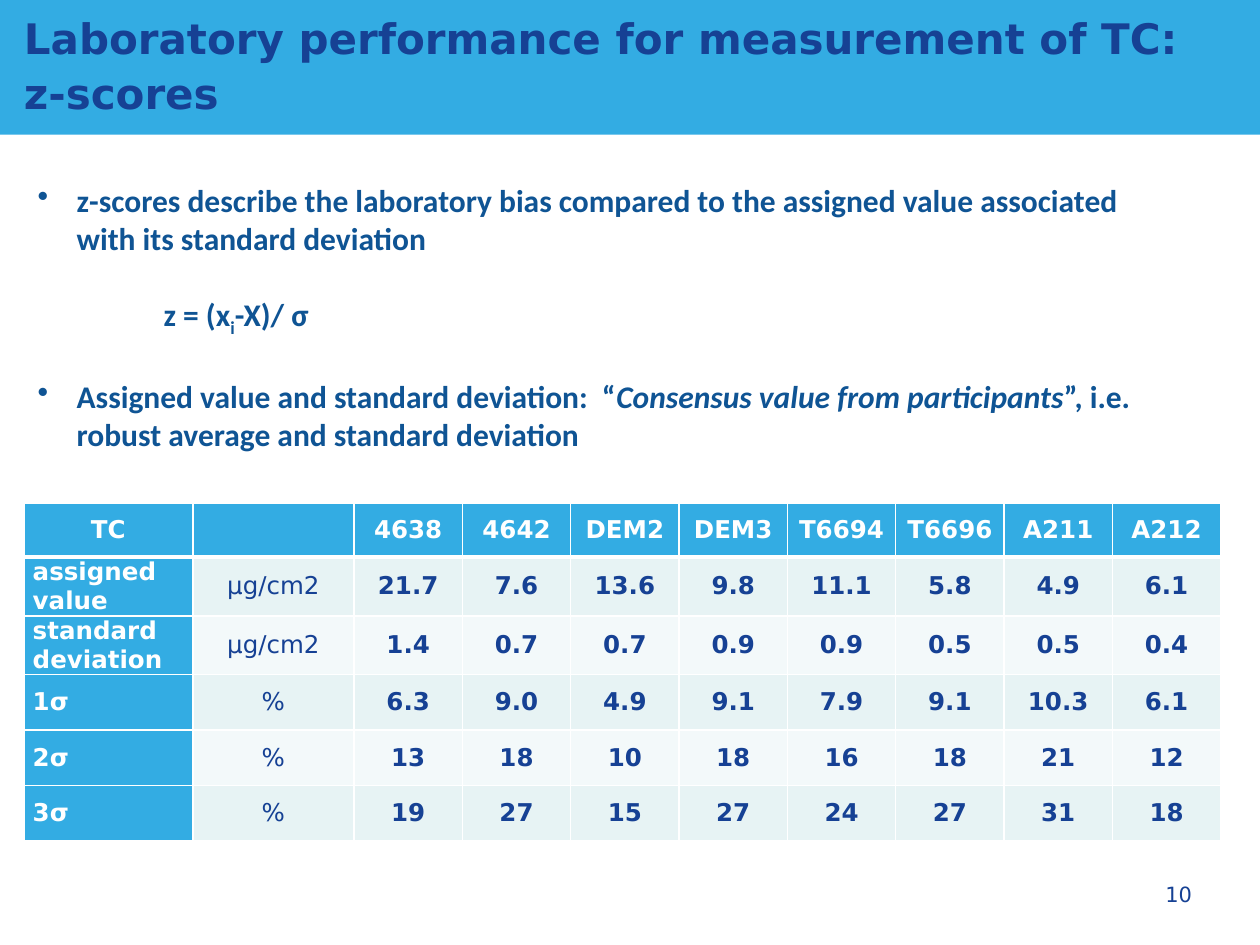
from lxml.etree import SubElement
from pptx import Presentation
from pptx.dml.color import RGBColor
from pptx.enum.shapes import MSO_SHAPE
from pptx.enum.text import MSO_ANCHOR, MSO_AUTO_SIZE, PP_ALIGN
from pptx.oxml.ns import qn
from pptx.util import Inches, Pt

# Content
TITLE = ["Laboratory performance for measurement of TC:", "z-scores"]
PAGE_NUMBER = "10"
# Each paragraph: has a bullet, then runs of (text, style)
BODY = [
    (True, [("z-scores describe the laboratory bias compared to the assigned value "
             "associated with its standard deviation", "")]),
    (False, [("z = (x", ""), ("i", "subscript"), ("-X)/ σ", "")]),
    (True, [("Assigned value and standard deviation:  “", ""),
            ("Consensus value from participants", "italic"),
            ("”, i.e. robust average and standard deviation", "")]),
]
TABLE = [
    ["TC", "", "4638", "4642", "DEM2", "DEM3", "T6694", "T6696", "A211", "A212"],
    ["assigned value", "μg/cm2", "21.7", "7.6", "13.6", "9.8", "11.1", "5.8", "4.9", "6.1"],
    ["standard deviation", "μg/cm2", "1.4", "0.7", "0.7", "0.9", "0.9", "0.5", "0.5", "0.4"],
    ["1σ", "%", "6.3", "9.0", "4.9", "9.1", "7.9", "9.1", "10.3", "6.1"],
    ["2σ", "%", "13", "18", "10", "18", "16", "18", "21", "12"],
    ["3σ", "%", "19", "27", "15", "27", "24", "27", "31", "18"],
]
COLUMN_WIDTHS = [1.34, 1.28] + [0.86] * 8
ROW_HEIGHTS = [0.43] + [0.44] * 5

# Style
SKY = RGBColor(0x33, 0xAC, 0xE3)
NAVY = RGBColor(0x16, 0x41, 0x94)
BLUE = RGBColor(0x0F, 0x54, 0x94)
WHITE = RGBColor(0xFF, 0xFF, 0xFF)
BANDS = [RGBColor(0xF3, 0xF9, 0xFA), RGBColor(0xE7, 0xF3, 0xF4)]
TABLE_FONT = "DejaVu Sans"
BODY_FONT = "Calibri"
LEFT = 0.19


def set_font(paragraph, name, size, color, bold=False):
    font = paragraph.font
    font.name, font.size, font.bold = name, Pt(size), bold
    font.color.rgb = color


def set_insets(frame, horizontal, vertical):
    frame.margin_left = frame.margin_right = Inches(horizontal)
    frame.margin_top = frame.margin_bottom = Inches(vertical)


def set_indent(paragraph, left, first=0, bullet=None):
    properties = paragraph._p.get_or_add_pPr()
    properties.set("marL", str(Inches(left)))
    properties.set("indent", str(Inches(first)))
    if bullet:
        SubElement(properties, qn("a:buChar"), char=bullet)


def set_borders(cell, widths):
    properties = cell._tc.get_or_add_tcPr()
    for side, width in widths.items():
        line = SubElement(properties, qn(f"a:ln{side}"), w=str(Pt(width)))
        fill = SubElement(line, qn("a:solidFill"))
        SubElement(fill, qn("a:srgbClr"), val=str(WHITE))


presentation = Presentation()
presentation.slide_width, presentation.slide_height = Inches(10), Inches(7.5)
slide = presentation.slides.add_slide(presentation.slide_layouts[5])

# Header band, behind the title
band = slide.shapes.add_shape(MSO_SHAPE.RECTANGLE, 0, 0, Inches(10), Inches(1.07))
band.shadow.inherit = False
band.fill.solid()
band.fill.fore_color.rgb = SKY
band.line.fill.background()
slide.shapes._spTree.insert(2, band._element)

# Title
title = slide.shapes.title
title.left, title.top = Inches(LEFT), Inches(0.06)
title.width, title.height = Inches(9.8), Inches(0.51)
frame = title.text_frame
frame.text = "\n".join(TITLE)
frame.word_wrap = True
frame.auto_size = MSO_AUTO_SIZE.NONE
frame.vertical_anchor = MSO_ANCHOR.TOP
set_insets(frame, 0, 0)
for paragraph in frame.paragraphs:
    paragraph.alignment = PP_ALIGN.LEFT
    paragraph.line_spacing = 1.1
    set_font(paragraph, TABLE_FONT, 24, NAVY, bold=True)

# Explanation with the formula
body = slide.shapes.add_textbox(Inches(0.2), Inches(1.39), Inches(9.29), Inches(2.83))
frame = body.text_frame
frame.word_wrap = True
for index, (has_bullet, runs) in enumerate(BODY):
    paragraph = frame.add_paragraph() if index else frame.paragraphs[0]
    if has_bullet:
        set_indent(paragraph, 0.31, -0.31, "•")
    else:
        set_indent(paragraph, 1)
    if index:
        paragraph.space_before = Pt(22)
    set_font(paragraph, BODY_FONT, 18, BLUE, bold=True)
    for text, style in runs:
        run = paragraph.add_run()
        run.text = text
        if style == "italic":
            run.font.italic = True
        elif style == "subscript":
            run.font._element.set("baseline", "-25000")

# Results table
table = slide.shapes.add_table(
    len(TABLE), len(TABLE[0]), Inches(LEFT), Inches(3.99),
    Inches(sum(COLUMN_WIDTHS)), Inches(sum(ROW_HEIGHTS))).table
for column, width in zip(table.columns, COLUMN_WIDTHS):
    column.width = Inches(width)
for row, height in zip(table.rows, ROW_HEIGHTS):
    row.height = Inches(height)
for row_index, values in enumerate(TABLE):
    for column_index, value in enumerate(values):
        cell = table.cell(row_index, column_index)
        is_label = row_index == 0 or column_index == 0
        set_borders(cell, {"L": 1, "R": 1, "T": 3 if row_index == 1 else 1,
                           "B": 3 if row_index == 0 else 1})
        cell.fill.solid()
        cell.fill.fore_color.rgb = SKY if is_label else BANDS[row_index % 2]
        cell.vertical_anchor = MSO_ANCHOR.MIDDLE
        set_insets(cell, 0.07, 0)
        cell.text = value
        paragraph = cell.text_frame.paragraphs[0]
        is_row_label = column_index == 0 and row_index > 0
        paragraph.alignment = PP_ALIGN.LEFT if is_row_label else PP_ALIGN.CENTER
        set_font(paragraph, TABLE_FONT, 14, WHITE if is_label else NAVY,
                 bold=is_label or column_index > 1)

# Page number
number = slide.shapes.add_textbox(Inches(7.23), Inches(6.9), Inches(2.33), Inches(0.4))
frame = number.text_frame
frame.text = PAGE_NUMBER
frame.word_wrap = True
frame.vertical_anchor = MSO_ANCHOR.MIDDLE
set_insets(frame, 0.1, 0)
frame.paragraphs[0].alignment = PP_ALIGN.RIGHT
set_font(frame.paragraphs[0], TABLE_FONT, 12, NAVY)

presentation.save("out.pptx")
